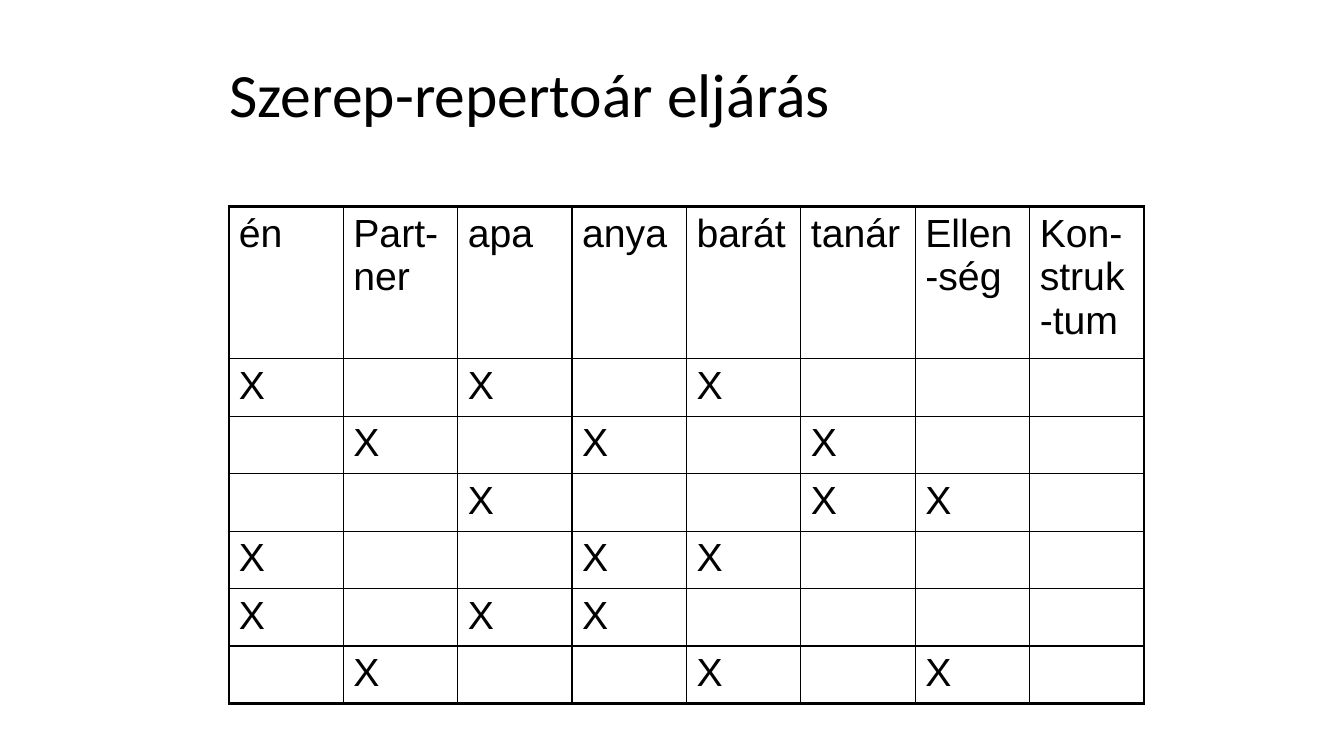
from lxml import etree
from pptx import Presentation
from pptx import util as u
from pptx.dml.color import RGBColor
from pptx.enum import text
from pptx.oxml import ns

BLACK = RGBColor(0, 0, 0)
THIN, THICK = 1, 2.25

HEADS = ["én", "Part-ner", "apa", "anya", "barát", "tanár", "Ellen-ség", "Kon-struk-tum"]
MARKS = [
    "X.X.X...",
    ".X.X.X..",
    "..X..XX.",
    "X..XX...",
    "X.XX....",
    ".X..X.X.",
]


class Deck:
    """Holds the text styles and the current slide."""

    title = {"name": "Calibri", "size": u.Pt(44)}
    body = {"name": "Arial", "size": u.Pt(28)}

    def __init__(self, wide, high):
        self.prs = Presentation()
        self.prs.slide_width, self.prs.slide_height = u.Inches(wide), u.Inches(high)
        self.slide = self.prs.slides.add_slide(self.prs.slide_layouts[6])

    def label(self, para, words, style):
        run = para.add_run()
        run.text = words
        for key, value in style.items():
            setattr(run.font, key, value)
        run.font.color.rgb = BLACK

    def head(self, words, *box):
        frame = self.slide.shapes.add_textbox(*map(u.Inches, box)).text_frame
        form = {"word_wrap": True, "vertical_anchor": text.MSO_ANCHOR.MIDDLE}
        for key, value in form.items():
            setattr(frame, key, value)
        para = frame.paragraphs[0]
        para.line_spacing = 0.9
        self.label(para, words, self.title)

    def edge(self, cell, side, width):
        props = cell._tc.get_or_add_tcPr()
        line = etree.SubElement(props, ns.qn("a:ln" + side), w=str(u.Pt(width)))
        fill = etree.SubElement(line, ns.qn("a:solidFill"))
        etree.SubElement(fill, ns.qn("a:srgbClr"), val=str(BLACK))

    def table(self, rows, highs, *box):
        count = len(rows[0])
        left, top, wide, high = map(u.Inches, box)
        grid = self.slide.shapes.add_table(len(rows), count, left, top, wide, high).table
        for key in ("first_row", "horz_banding"):
            setattr(grid, key, False)
        for col in grid.columns:
            col.width = wide // count
        for r, (row, tall) in enumerate(zip(rows, highs)):
            grid.rows[r].height = u.Inches(tall)
            for c, words in enumerate(row):
                cell = grid.cell(r, c)
                # Thick frame outside, thin rules inside
                outer = {"L": c == 0, "R": c == count - 1,
                         "T": r == 0, "B": r == len(rows) - 1}
                for side, thick in outer.items():
                    self.edge(cell, side, THICK if thick else THIN)
                cell.fill.background()
                if words:
                    self.label(cell.text_frame.paragraphs[0], words, self.body)


def main():
    deck = Deck(13.33, 7.5)

    # Title
    deck.head("Szerep-repertoár eljárás", 2.18, 0.36, 9.08, 1.21)

    # Grid of roles and marks
    marks = [[sign.strip(".") for sign in line] for line in MARKS]
    highs = [1.51] + [0.57] * len(marks)
    deck.table([HEADS] + marks, highs, 2.27, 2.05, 9.08, 4.93)

    deck.prs.save("out.pptx")


if __name__ == "__main__":
    main()
